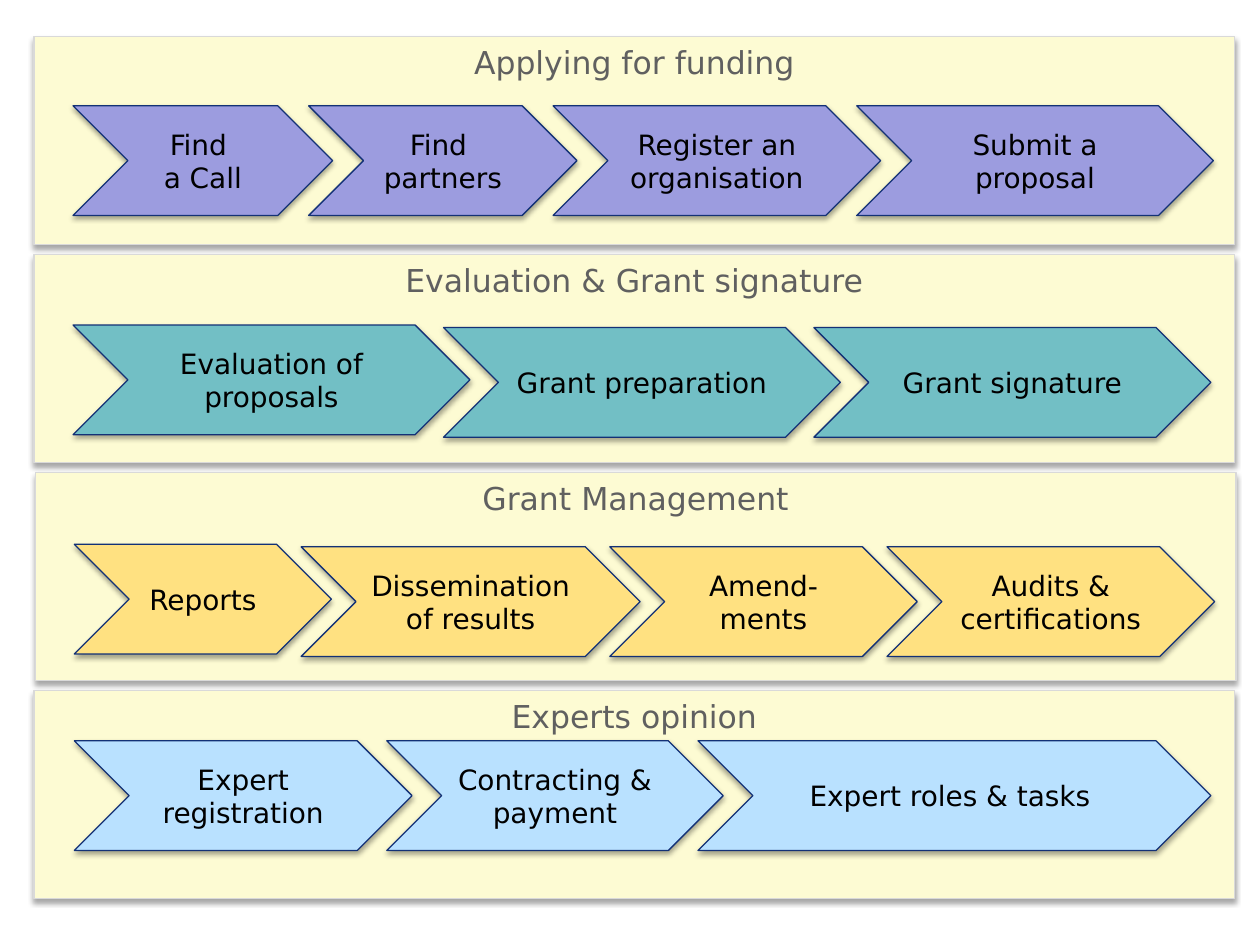
from dataclasses import dataclass

from lxml.etree import SubElement
from pptx import Presentation
from pptx.dml.color import RGBColor
from pptx.enum.shapes import MSO_SHAPE
from pptx.enum.text import MSO_ANCHOR, PP_ALIGN
from pptx.oxml.ns import qn
from pptx.shapes.autoshape import Shape
from pptx.slide import Slide
from pptx.util import Inches, Pt


@dataclass(frozen=True)
class Theme:
    font: str = "DejaVu Sans"
    heading_size: int = 18
    step_size: int = 16
    heading: str = "606060"
    step_text: str = "000000"
    panel: str = "FDFBD3"
    panel_line: str = "D9D9D9"
    step_line: str = "133176"
    shadow: str = "000000"
    line_width: float = 0.75
    shadow_blur: float = 3.1
    shadow_distance: float = 1.8
    shadow_opacity: int = 35


@dataclass(frozen=True)
class Grid:
    top: float = 0.29
    row_pitch: float = 1.73
    panel_width: float = 9.53
    panel_height: float = 1.65
    step_height: float = 0.87


@dataclass(frozen=True)
class Step:
    text: str
    width: float
    drop: float


@dataclass(frozen=True)
class Phase:
    heading: str
    fill: str
    left: float
    chain_left: float
    overlap: float
    steps: tuple[Step, ...]


THEME = Theme()
GRID = Grid()
PHASES = (
    Phase("Applying for funding", "9C9CDF", 0.27, 0.58, 0.19, (
        Step("Find \na Call", 2.06, 0.55),
        Step("Find \npartners", 2.13, 0.55),
        Step("Register an organisation", 2.6, 0.55),
        Step("Submit a proposal", 2.83, 0.55),
    )),
    Phase("Evaluation & Grant signature", "72BFC5", 0.27, 0.58, 0.21, (
        Step("Evaluation of proposals", 3.15, 0.56),
        Step("Grant preparation", 3.15, 0.58),
        Step("Grant signature", 3.15, 0.58),
    )),
    Phase("Grant Management", "FFE181", 0.28, 0.59, 0.24, (
        Step("Reports", 2.04, 0.57),
        Step("Dissemination of results", 2.69, 0.59),
        Step("Amend-ments", 2.44, 0.59),
        Step("Audits & certifications", 2.6, 0.59),
    )),
    Phase("Experts opinion", "B9E1FF", 0.27, 0.59, 0.2, (
        Step("Expert registration", 2.68, 0.4),
        Step("Contracting & payment", 2.67, 0.4),
        Step("Expert roles & tasks ", 4.07, 0.4),
    )),
)


def add_shadow(box: Shape) -> None:
    box.shadow.inherit = False
    effects = box._element.spPr.find(qn("a:effectLst"))
    shadow = SubElement(
        effects, qn("a:outerShdw"),
        blurRad=str(Pt(THEME.shadow_blur)), dist=str(Pt(THEME.shadow_distance)),
        dir=str(90 * 60000), algn="t", rotWithShape="0",
    )
    color = SubElement(shadow, qn("a:srgbClr"), val=THEME.shadow)
    SubElement(color, qn("a:alpha"), val=str(THEME.shadow_opacity * 1000))


def add_box(slide: Slide, kind: MSO_SHAPE, left: float, top: float, width: float,
            height: float, fill: str, line: str) -> Shape:
    box = slide.shapes.add_shape(
        kind, Inches(left), Inches(top), Inches(width), Inches(height))
    box.fill.solid()
    box.fill.fore_color.rgb = RGBColor.from_string(fill)
    box.line.color.rgb = RGBColor.from_string(line)
    box.line.width = Pt(THEME.line_width)
    add_shadow(box)
    return box


def write(box: Shape, text: str, size: int, color: str, anchor: MSO_ANCHOR) -> None:
    frame = box.text_frame
    frame.text = text
    frame.word_wrap = True
    frame.vertical_anchor = anchor
    for para in frame.paragraphs:
        para.alignment = PP_ALIGN.CENTER
        for span in para.runs:
            span.font.name = THEME.font
            span.font.size = Pt(size)
            span.font.color.rgb = RGBColor.from_string(color)


def draw_phase(slide: Slide, phase: Phase, row: int) -> None:
    top = GRID.top + row * GRID.row_pitch
    panel = add_box(slide, MSO_SHAPE.RECTANGLE, phase.left, top, GRID.panel_width,
                    GRID.panel_height, THEME.panel, THEME.panel_line)
    write(panel, phase.heading, THEME.heading_size, THEME.heading, MSO_ANCHOR.TOP)
    left = phase.chain_left
    for step in phase.steps:
        chevron = add_box(slide, MSO_SHAPE.CHEVRON, left, top + step.drop, step.width,
                          GRID.step_height, phase.fill, THEME.step_line)
        write(chevron, step.text, THEME.step_size, THEME.step_text, MSO_ANCHOR.MIDDLE)
        left += step.width - phase.overlap


def main() -> None:
    deck = Presentation()
    deck.slide_width = Inches(10)
    deck.slide_height = Inches(7.5)
    slide = deck.slides.add_slide(deck.slide_layouts[6])
    for row, phase in enumerate(PHASES):
        draw_phase(slide, phase, row)
    deck.save("out.pptx")


if __name__ == "__main__":
    main()
